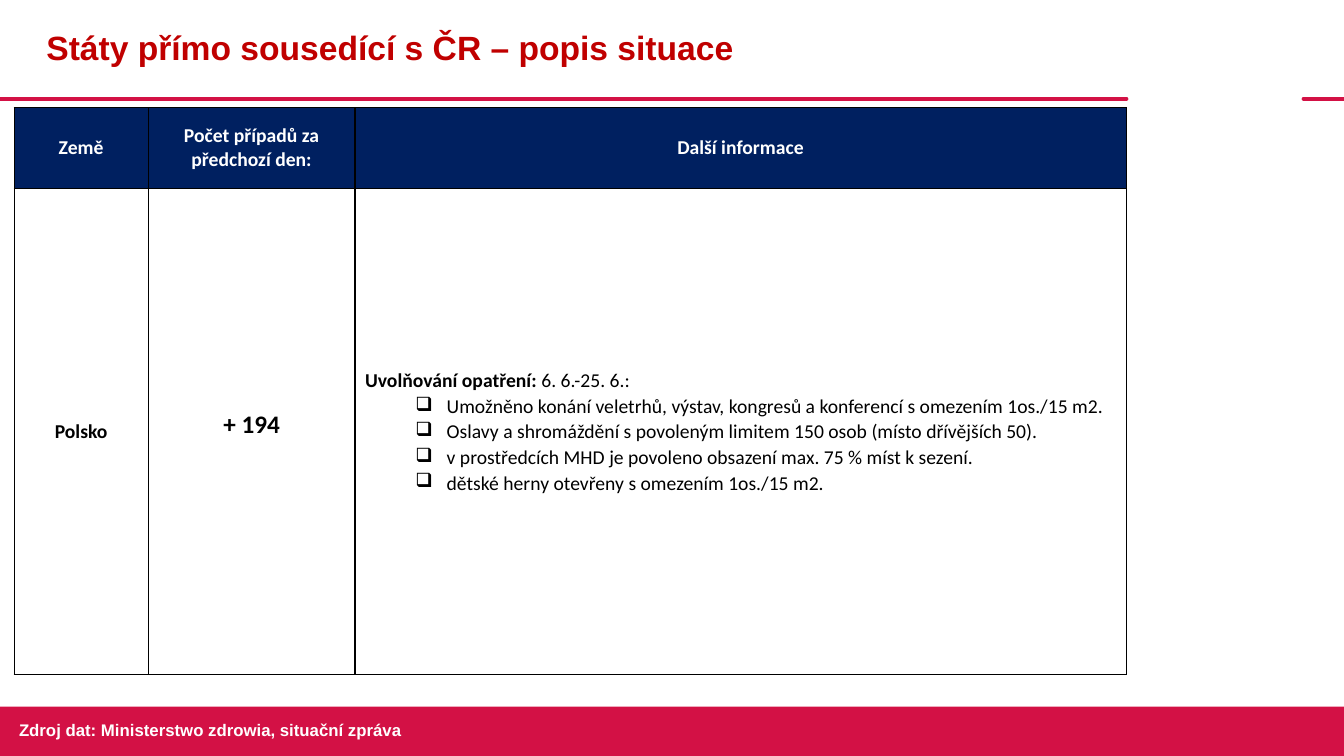
"""Build the slide on states neighbouring the Czech Republic: situation in Poland."""
from lxml import etree
from pptx import Presentation, util as u
from pptx.dml.color import RGBColor
from pptx.enum import shapes, text
from pptx.oxml.ns import qn

THEME = {
    "crimson": "D31145", "red": "C00000", "navy": "002060", "white": "FFFFFF", "black": "000000",
    "heading": 24, "figure": 18, "body": 14, "source": 12,
    "head_font": "Arial", "table_font": "Calibri",
}
RULE_Y, RIGHT_EDGE = 13.07, 83.8
COLS, ROWS = (9.98, 15.38, 57.39), (10.67, 64.27)

prs = Presentation()
prs.slide_width, prs.slide_height = u.Inches(13.33), u.Inches(7.5)
s = prs.slides.add_slide(prs.slide_layouts[5])


def box(*shares):
    """Turn alternating width and height percentages into slide lengths."""
    sides = (prs.slide_width, prs.slide_height)
    return [int(sides[i % 2] * share / 100) for i, share in enumerate(shares)]


def write(p, words, size, color, font="table_font", bold=True):
    """Add a formatted run to a paragraph."""
    r = p.add_run()
    r.text = words
    for name, value in {"size": u.Pt(THEME[size]), "name": THEME[font], "bold": bold}.items():
        setattr(r.font, name, value)
    r.font.color.rgb = RGBColor.from_string(THEME[color])


for start, end in ((0, RIGHT_EDGE), (97, 100)):
    sp = s.shapes.add_connector(shapes.MSO_CONNECTOR.STRAIGHT, *box(start, RULE_Y, end, RULE_Y))
    sp.line.color.rgb = RGBColor.from_string(THEME["crimson"])
    sp.line.width = u.Pt(3)
    spPr = sp._element.spPr
    spPr.find(qn("a:ln")).set("cap", "rnd")
    etree.SubElement(spPr, qn("a:effectLst"))

sp = s.shapes.add_shape(shapes.MSO_SHAPE.RECTANGLE, *box(0, 93.47, 100, 6.53))
sp.shadow.inherit = False
sp.fill.solid()
sp.fill.fore_color.rgb = RGBColor.from_string(THEME["crimson"])
sp.line.fill.background()

title = s.shapes.title
title.left, title.top, title.width, title.height = box(2.7, 0, 81.1, RULE_Y)
tf = title.text_frame
tf.vertical_anchor = text.MSO_ANCHOR.MIDDLE
p = tf.paragraphs[0]
p.alignment, p.line_spacing = text.PP_ALIGN.LEFT, 0.9
write(p, "Státy přímo sousedící s ČR – popis situace", "heading", "red", "head_font")

tf = s.shapes.add_textbox(*box(0.68, 94.53, 63.5, 4)).text_frame
tf.word_wrap = True
write(tf.paragraphs[0], "Zdroj dat: Ministerstwo zdrowia, situační zpráva", "source", "white", "head_font")

table = s.shapes.add_table(2, 3, *box(1.05, 14.27, sum(COLS), sum(ROWS))).table
for column, share in zip(table.columns, COLS):
    column.width = box(share)[0]
for row, share in zip(table.rows, ROWS):
    row.height = box(0, share)[1]

for cell in table.iter_cells():
    cell.vertical_anchor = text.MSO_ANCHOR.MIDDLE
    cell.fill.background()
    tcPr = cell._tc.get_or_add_tcPr()
    for i, side in enumerate(("a:lnL", "a:lnR", "a:lnT", "a:lnB")):
        ln = etree.Element(qn(side), w=str(u.Pt(1)))
        fill = etree.SubElement(ln, qn("a:solidFill"))
        etree.SubElement(fill, qn("a:srgbClr"), val=THEME["black"])
        tcPr.insert(i, ln)

for i, label in enumerate(("Země", "Počet případů za předchozí den:", "Další informace")):
    cell = table.cell(0, i)
    cell.fill.solid()
    cell.fill.fore_color.rgb = RGBColor.from_string(THEME["navy"])
    p = cell.text_frame.paragraphs[0]
    p.alignment = text.PP_ALIGN.CENTER
    write(p, label, "body", "white")

for i, (words, size) in enumerate((("Polsko", "body"), ("+ 194", "figure"))):
    p = table.cell(1, i).text_frame.paragraphs[0]
    p.alignment = text.PP_ALIGN.CENTER
    write(p, words, size, "black")
p.line_spacing = u.Pt(12)

tf = table.cell(1, 2).text_frame
p = tf.paragraphs[0]
write(p, "Uvolňování opatření:", "body", "black")
write(p, " 6. 6.-25. 6.:", "body", "black", bold=False)
for measure in (
    "Umožněno konání veletrhů, výstav, kongresů a konferencí s omezením 1os./15 m2.",
    "Oslavy a shromáždění s povoleným limitem 150 osob (místo dřívějších 50).",
    "v prostředcích MHD je povoleno obsazení max. 75 % míst k sezení.",
    "dětské herny otevřeny s omezením 1os./15 m2.",
):
    p = tf.add_paragraph()
    p.level = 1
    pPr = p._p.get_or_add_pPr()
    pPr.set("marL", str(u.Inches(0.81)))
    pPr.set("indent", str(u.Inches(-0.31)))
    etree.SubElement(pPr, qn("a:buChar"), char="❑")
    write(p, measure, "body", "black", bold=False)
for p in tf.paragraphs:
    p.alignment, p.line_spacing = text.PP_ALIGN.JUSTIFY, 1.07

prs.save("out.pptx")
